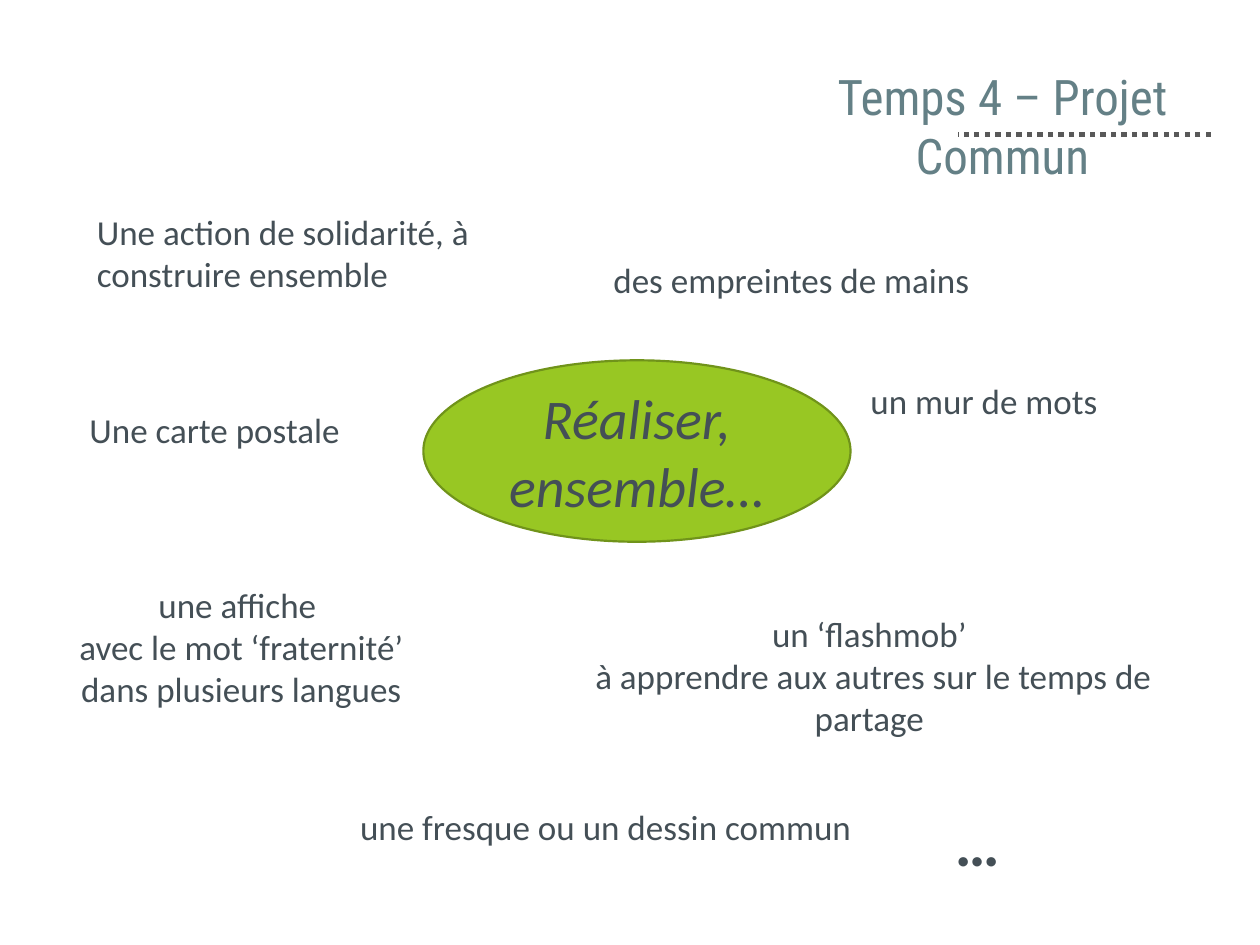
from pptx import Presentation
from pptx.dml.color import RGBColor
from pptx.enum.dml import MSO_LINE as Dash
from pptx.enum.shapes import MSO_CONNECTOR as Link, MSO_SHAPE as Form
from pptx.enum.text import MSO_ANCHOR as Anchor, MSO_AUTO_SIZE as Fit, PP_ALIGN as Align
from pptx.oxml.ns import qn
from pptx.util import Inches, Pt
from lxml.etree import SubElement

COLS, ROWS = 100, 75
INK, SLATE, GREEN, OLIVE, GREY = "444F56", "648086", "98C723", "70931A", "595959"


def paint(code):
    return RGBColor.from_string(code)


class Deck:
    def __init__(self):
        self.prs = Presentation()
        self.prs.slide_width, self.prs.slide_height = Inches(10), Inches(7.5)
        self.slide = self.prs.slides.add_slide(self.prs.slide_layouts[6])
        self.base = {"name": "Calibri", "size": Pt(20)}

    def grid(self, *cells):
        steps = (self.prs.slide_width / COLS, self.prs.slide_height / ROWS)
        return [round(cell * steps[i % 2]) for i, cell in enumerate(cells)]

    def letter(self, frame, lines, align, color=INK, **style):
        for i, line in enumerate(lines):
            para = frame.add_paragraph() if i else frame.paragraphs[0]
            para.alignment = align
            run = para.add_run()
            run.text = line
            for key, value in {**self.base, **style}.items():
                setattr(run.font, key, value)
            run.font.color.rgb = paint(color)

    def text(self, area, lines, align=Align.LEFT, wrap=True, **style):
        frame = self.slide.shapes.add_textbox(*self.grid(*area)).text_frame
        frame.word_wrap = wrap
        frame.auto_size = Fit.SHAPE_TO_FIT_TEXT
        self.letter(frame, lines, align, **style)

    def oval(self, area, lines, **style):
        shape = self.slide.shapes.add_shape(Form.OVAL, *self.grid(*area))
        shape.shadow.inherit = False
        shape.fill.solid()
        shape.fill.fore_color.rgb = paint(GREEN)
        shape.line.color.rgb = paint(OLIVE)
        shape.line.width = Pt(1.25)
        shape.text_frame.word_wrap = True
        shape.text_frame.vertical_anchor = Anchor.MIDDLE
        self.letter(shape.text_frame, lines, Align.CENTER, **style)

    def rule(self, ends):
        link = self.slide.shapes.add_connector(Link.STRAIGHT, *self.grid(*ends))
        link.line.color.rgb = paint(GREY)
        link.line.width = Pt(3)
        link.line.dash_style = Dash.ROUND_DOT
        SubElement(link._element.spPr, qn("a:effectLst"))


def main():
    deck = Deck()
    mid = Align.CENTER
    deck.rule((96.1, 10.7, 76, 10.7))
    deck.text((59.1, 4.8, 40.9, 5.7), ["Temps 4 – Projet Commun"], mid,
              color=SLATE, name="Roboto Condensed", size=Pt(28))
    deck.oval((33.6, 28.6, 33.9, 14.4), ["Réaliser, ensemble…"], size=Pt(32), italic=True)

    ideas = [
        (6, 31.9, 22.7, "Une carte postale ", mid),
        (68.1, 29.6, 20.8, "un mur de mots", Align.LEFT),
        (47.7, 20, 30.6, "des empreintes de mains", Align.LEFT),
        (27.6, 63.4, 41.4, "une fresque ou un dessin commun", Align.LEFT),
    ]
    for left, top, width, idea, align in ideas:
        deck.text((left, top, width, 4.4), [idea], align, wrap=False)

    deck.text((2.4, 45.8, 33.5, 11.1),
              ["une affiche ", "avec le mot ‘fraternité’ dans plusieurs langues"], mid)
    deck.text((44, 48.1, 50, 11.1),
              ["un ‘flashmob’", " à apprendre aux autres sur le temps de partage"], mid)
    deck.text((74.8, 63.3, 6.2, 7.1), ["…"], size=Pt(36), bold=True)
    deck.text((6.7, 16.2, 33.5, 7.7), ["Une action de solidarité, à construire ensemble"])
    deck.prs.save("out.pptx")


if __name__ == "__main__":
    main()
